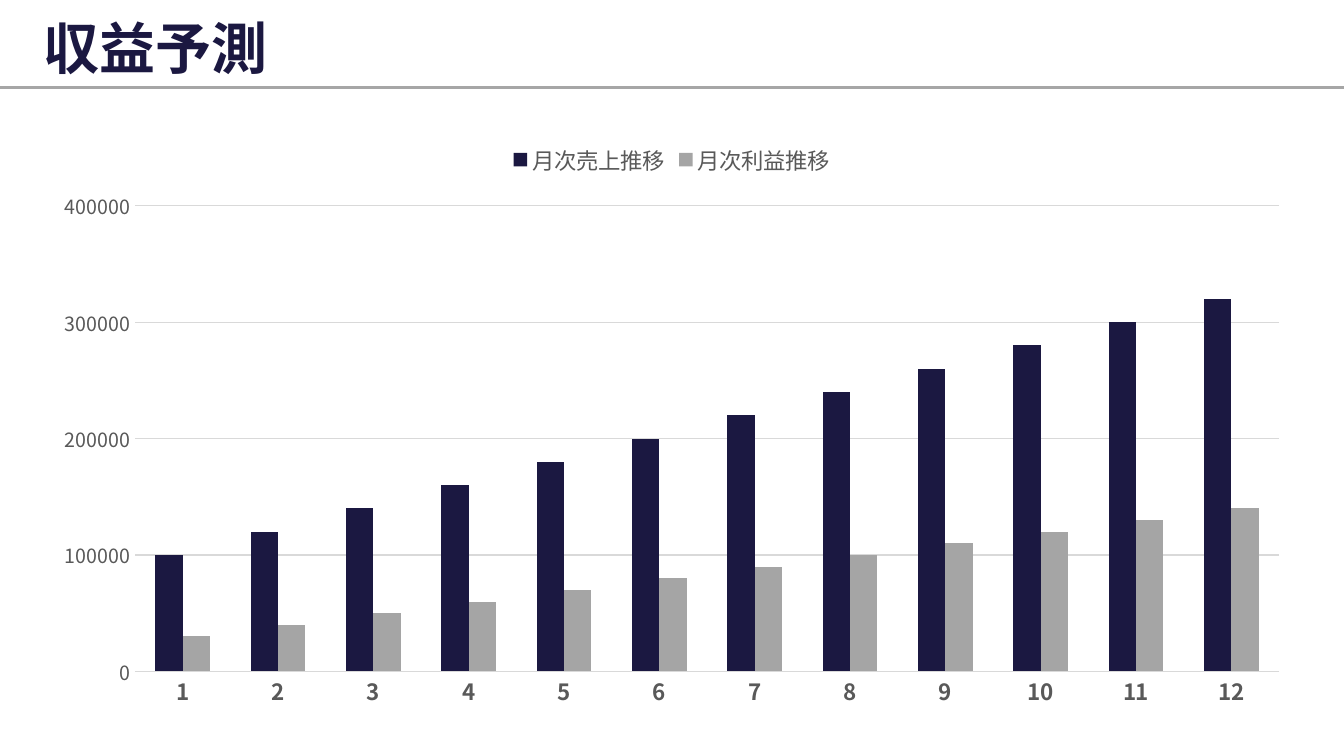
from dataclasses import dataclass

from lxml import etree
from pptx import Presentation
from pptx.chart.data import CategoryChartData
from pptx.dml.color import RGBColor
from pptx.enum.chart import XL_CHART_TYPE, XL_LEGEND_POSITION, XL_TICK_MARK
from pptx.enum.shapes import MSO_CONNECTOR
from pptx.enum.text import MSO_ANCHOR, MSO_AUTO_SIZE, PP_ALIGN
from pptx.oxml.ns import qn
from pptx.util import Cm, Pt

COLUMNS = XL_CHART_TYPE.COLUMN_CLUSTERED
LEGEND_TOP = XL_LEGEND_POSITION.TOP
NO_TICK = XL_TICK_MARK.NONE
STRAIGHT = MSO_CONNECTOR.STRAIGHT
MIDDLE = MSO_ANCHOR.MIDDLE
NO_AUTOSIZE = MSO_AUTO_SIZE.NONE
LEFT = PP_ALIGN.LEFT

NAVY = RGBColor(0x1B, 0x18, 0x41)
GRAY = RGBColor(0xA5, 0xA5, 0xA5)
RULE_GRAY = RGBColor(0xA6, 0xA6, 0xA6)
GRID_GRAY = RGBColor(0xD9, 0xD9, 0xD9)
LABEL_GRAY = RGBColor(0x59, 0x59, 0x59)

TITLE_FONT = "Arial"
JP_FONT = "Noto Sans CJK JP"
SLIDE_W, SLIDE_H = Cm(33.87), Cm(19.05)
MONTHS = range(1, 13)


@dataclass
class MonthlySeries:
    name: str
    start: int
    step: int
    color: RGBColor

    def values(self) -> list[int]:
        return [self.start + self.step * (month - 1) for month in MONTHS]


SERIES = [
    MonthlySeries("月次売上推移", 100000, 20000, NAVY),
    MonthlySeries("月次利益推移", 30000, 10000, GRAY),
]


def set_east_asian_font(r_pr, name: str) -> None:
    ea = etree.Element(qn("a:ea"), typeface=name)
    r_pr.find(qn("a:latin")).addnext(ea)


def format_labels(font, size: int, bold: bool = False) -> None:
    font.size = Pt(size)
    font.bold = bold
    font.name = JP_FONT
    font.color.rgb = LABEL_GRAY


def format_line(line, color: RGBColor, width: float) -> None:
    line.color.rgb = color
    line.width = Pt(width)


def add_rule(slide) -> None:
    y = Cm(2.21)
    sp = slide.shapes.add_connector(STRAIGHT, 0, y, SLIDE_W, y)
    format_line(sp.line, RULE_GRAY, 2.25)
    etree.SubElement(sp._element.spPr, qn("a:effectLst"))


def add_title(slide, text: str) -> None:
    sp = slide.shapes.title
    sp.left, sp.top, sp.width, sp.height = Cm(0.84), Cm(0.38), Cm(29.21), Cm(1.83)
    tf = sp.text_frame
    tf.auto_size = NO_AUTOSIZE
    tf.word_wrap = True
    tf.vertical_anchor = MIDDLE
    p = tf.paragraphs[0]
    p.alignment = LEFT
    p.line_spacing = 0.9
    r = p.add_run()
    r.text = text
    r.font.size = Pt(40)
    r.font.bold = True
    r.font.color.rgb = NAVY
    r.font.name = TITLE_FONT
    set_east_asian_font(r.font._element, JP_FONT)


def add_forecast_chart(slide) -> None:
    data = CategoryChartData()
    data.categories = [str(month) for month in MONTHS]
    for series in SERIES:
        data.add_series(series.name, series.values())
    chart = slide.shapes.add_chart(
        COLUMNS, Cm(0.99), Cm(3.33), Cm(31.88), Cm(14.78), data
    ).chart
    chart.has_title = False
    chart.font.name = JP_FONT
    chart.font.size = Pt(10)

    chart.has_legend = True
    chart.legend.position = LEGEND_TOP
    chart.legend.include_in_layout = False
    format_labels(chart.legend.font, 16)

    months = chart.category_axis
    format_labels(months.tick_labels.font, 16, bold=True)
    format_line(months.format.line, GRID_GRAY, 0.75)

    amounts = chart.value_axis
    amounts.minimum_scale, amounts.maximum_scale = 0, 400000
    amounts.major_unit = 100000
    format_labels(amounts.tick_labels.font, 14)
    amounts.format.line.fill.background()
    amounts.has_major_gridlines = True
    format_line(amounts.major_gridlines.format.line, GRID_GRAY, 0.75)

    for axis in (months, amounts):
        axis.major_tick_mark = axis.minor_tick_mark = NO_TICK

    plot = chart.plots[0]
    plot.gap_width = 150
    plot.overlap = 0
    plot.vary_by_categories = False
    for bars, series in zip(plot.series, SERIES):
        bars.format.fill.solid()
        bars.format.fill.fore_color.rgb = series.color


def main() -> None:
    prs = Presentation()
    prs.slide_width, prs.slide_height = SLIDE_W, SLIDE_H
    title_only = prs.slide_layouts[5]
    slide = prs.slides.add_slide(title_only)
    add_rule(slide)
    add_title(slide, "収益予測")
    add_forecast_chart(slide)
    prs.save("out.pptx")


if __name__ == "__main__":
    main()
